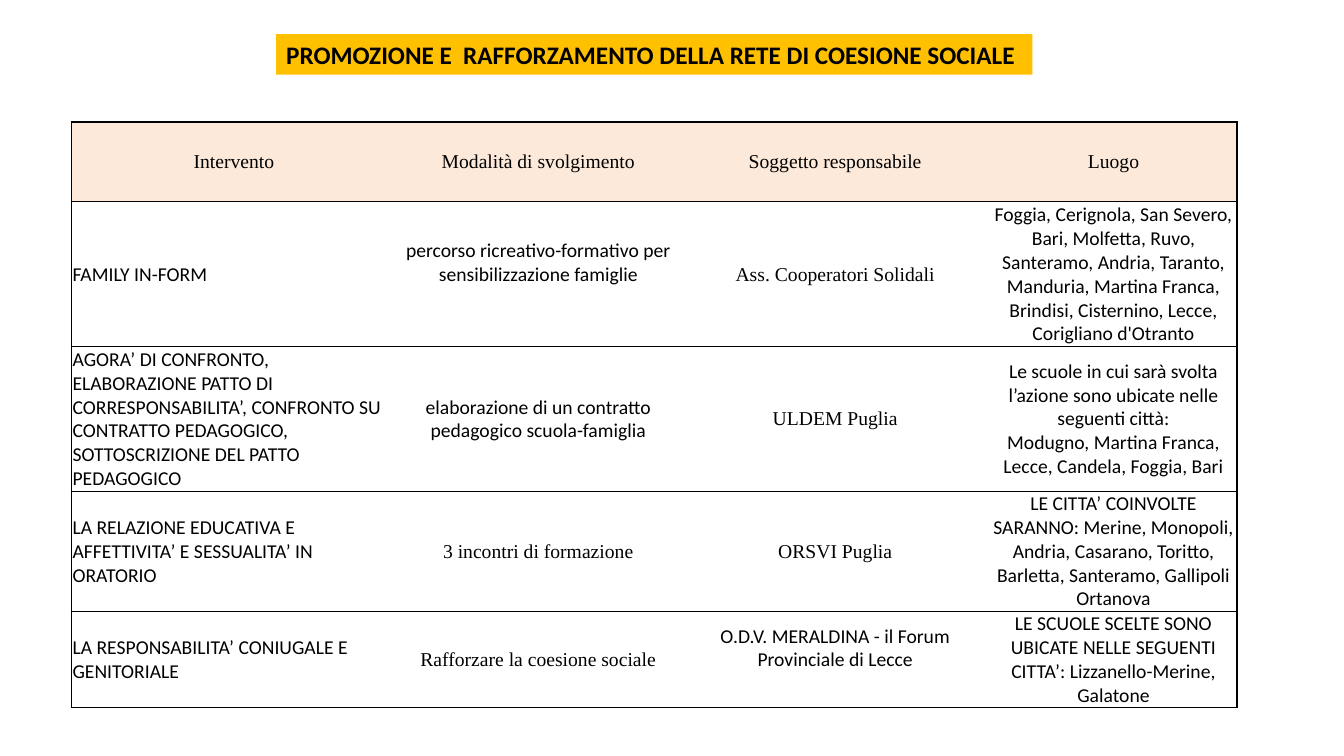
from dataclasses import dataclass

from lxml import etree
from pptx import Presentation
from pptx.dml.color import RGBColor
from pptx.enum.shapes import MSO_SHAPE
from pptx.enum.text import MSO_ANCHOR, PP_ALIGN
from pptx.oxml.ns import qn
from pptx.util import Inches, Pt

RECTANGLE = MSO_SHAPE.RECTANGLE
MIDDLE = MSO_ANCHOR.MIDDLE
LEFT, CENTER = PP_ALIGN.LEFT, PP_ALIGN.CENTER


@dataclass(frozen=True)
class Theme:
    ink: str = "000000"
    banner: str = "FFC000"
    header: str = "FDE9D9"
    sans: str = "Calibri"
    serif: str = "Times New Roman"
    title_size: int = 18
    table_size: int = 14
    outer_line: float = 1
    row_line: float = 0.5


@dataclass(frozen=True)
class Entry:
    text: str
    font: str
    lift: float = 0


THEME = Theme()
TITLE = "PROMOZIONE E  RAFFORZAMENTO DELLA RETE DI COESIONE SOCIALE"
COLUMN_WIDTHS = (3.22, 2.82, 3.07, 2.45)
ROW_HEIGHTS = (0.79, 1.44, 1.43, 1.19, 0.95)
HEADINGS = ("Intervento", "Modalità di svolgimento", "Soggetto responsabile", "Luogo")


def sans(text, lift=0):
    return Entry(text, THEME.sans, lift)


def serif(text):
    return Entry(text, THEME.serif)


INTERVENTIONS = (
    (
        sans("FAMILY IN-FORM"),
        sans("percorso ricreativo-formativo per sensibilizzazione famiglie", 0.23),
        serif("Ass. Cooperatori Solidali"),
        sans("Foggia, Cerignola, San Severo, Bari, Molfetta, Ruvo, Santeramo, Andria, "
             "Taranto, Manduria, Martina Franca, Brindisi, Cisternino, Lecce, "
             "Corigliano d'Otranto"),
    ),
    (
        sans("AGORA’ DI CONFRONTO, ELABORAZIONE PATTO DI CORRESPONSABILITA’, "
             "CONFRONTO SU CONTRATTO PEDAGOGICO, SOTTOSCRIZIONE DEL PATTO PEDAGOGICO"),
        sans("elaborazione di un contratto pedagogico scuola-famiglia"),
        serif("ULDEM Puglia"),
        sans("Le scuole in cui sarà svolta l’azione sono ubicate nelle seguenti città:\n"
             "Modugno, Martina Franca, Lecce, Candela, Foggia, Bari"),
    ),
    (
        sans("LA RELAZIONE EDUCATIVA E AFFETTIVITA’ E SESSUALITA’ IN ORATORIO"),
        serif("3 incontri di formazione"),
        serif("ORSVI Puglia"),
        sans("LE CITTA’ COINVOLTE SARANNO: Merine, Monopoli, Andria, Casarano, Toritto, "
             "Barletta, Santeramo, Gallipoli Ortanova"),
    ),
    (
        sans("LA RESPONSABILITA’ CONIUGALE E GENITORIALE"),
        serif("Rafforzare la coesione sociale"),
        sans("O.D.V. MERALDINA - il Forum Provinciale di Lecce", 0.23),
        sans("LE SCUOLE SCELTE SONO UBICATE NELLE SEGUENTI CITTA’: "
             "Lizzanello-Merine, Galatone"),
    ),
)


def style_text(frame, font, size, align, bold=False):
    for para in frame.paragraphs:
        para.alignment = align
        para.font.name = font
        para.font.size = Pt(size)
        para.font.bold = bold
        para.font.color.rgb = RGBColor.from_string(THEME.ink)


def set_borders(cell, widths):
    properties = cell._tc.get_or_add_tcPr()
    for side, width in zip("LRTB", widths):
        line = etree.SubElement(properties, qn(f"a:ln{side}"), w=str(Pt(width)))
        if width:
            fill = etree.SubElement(line, qn("a:solidFill"))
            etree.SubElement(fill, qn("a:srgbClr"), val=THEME.ink)
        else:
            etree.SubElement(line, qn("a:noFill"))


def fill_cell(cell, entry, align):
    cell.vertical_anchor = MIDDLE
    cell.margin_left = cell.margin_right = cell.margin_top = Inches(0.01)
    cell.margin_bottom = Inches(entry.lift)
    cell.text_frame.text = entry.text
    style_text(cell.text_frame, entry.font, THEME.table_size, align)


def add_banner(page, left, top, width, height):
    banner = page.shapes.add_shape(
        RECTANGLE, Inches(left), Inches(top), Inches(width), Inches(height))
    banner.shadow.inherit = False
    banner.fill.solid()
    banner.fill.fore_color.rgb = RGBColor.from_string(THEME.banner)
    banner.line.fill.background()
    frame = banner.text_frame
    frame.word_wrap = True
    frame.vertical_anchor = MIDDLE
    frame.text = TITLE
    style_text(frame, THEME.sans, THEME.title_size, LEFT, bold=True)


def add_interventions(page, left, top):
    rows = (tuple(serif(heading) for heading in HEADINGS),) + INTERVENTIONS
    table = page.shapes.add_table(
        len(ROW_HEIGHTS), len(COLUMN_WIDTHS), Inches(left), Inches(top),
        Inches(sum(COLUMN_WIDTHS)), Inches(sum(ROW_HEIGHTS))).table
    table.first_row = table.horz_banding = False
    for column, width in zip(table.columns, COLUMN_WIDTHS):
        column.width = Inches(width)
    for row, height in zip(table.rows, ROW_HEIGHTS):
        row.height = Inches(height)
    last_column = len(COLUMN_WIDTHS) - 1
    for row_index, entries in enumerate(rows):
        is_header = row_index == 0
        top_line = THEME.outer_line if row_index <= 1 else THEME.row_line
        bottom_line = THEME.outer_line if is_header else THEME.row_line
        for column_index, entry in enumerate(entries):
            cell = table.cell(row_index, column_index)
            fill_cell(cell, entry, CENTER if is_header or column_index else LEFT)
            left_line = THEME.outer_line if column_index == 0 else 0
            right_line = THEME.outer_line if column_index == last_column else 0
            set_borders(cell, (left_line, right_line, top_line, bottom_line))
            if is_header:
                cell.fill.solid()
                cell.fill.fore_color.rgb = RGBColor.from_string(THEME.header)
            else:
                cell.fill.background()


def main():
    deck = Presentation()
    deck.slide_width, deck.slide_height = Inches(13.33), Inches(7.5)
    page = deck.slides.add_slide(deck.slide_layouts[6])
    add_interventions(page, 0.71, 1.21)
    add_banner(page, 2.74, 0.34, 7.5, 0.4)
    deck.save("out.pptx")


if __name__ == "__main__":
    main()
